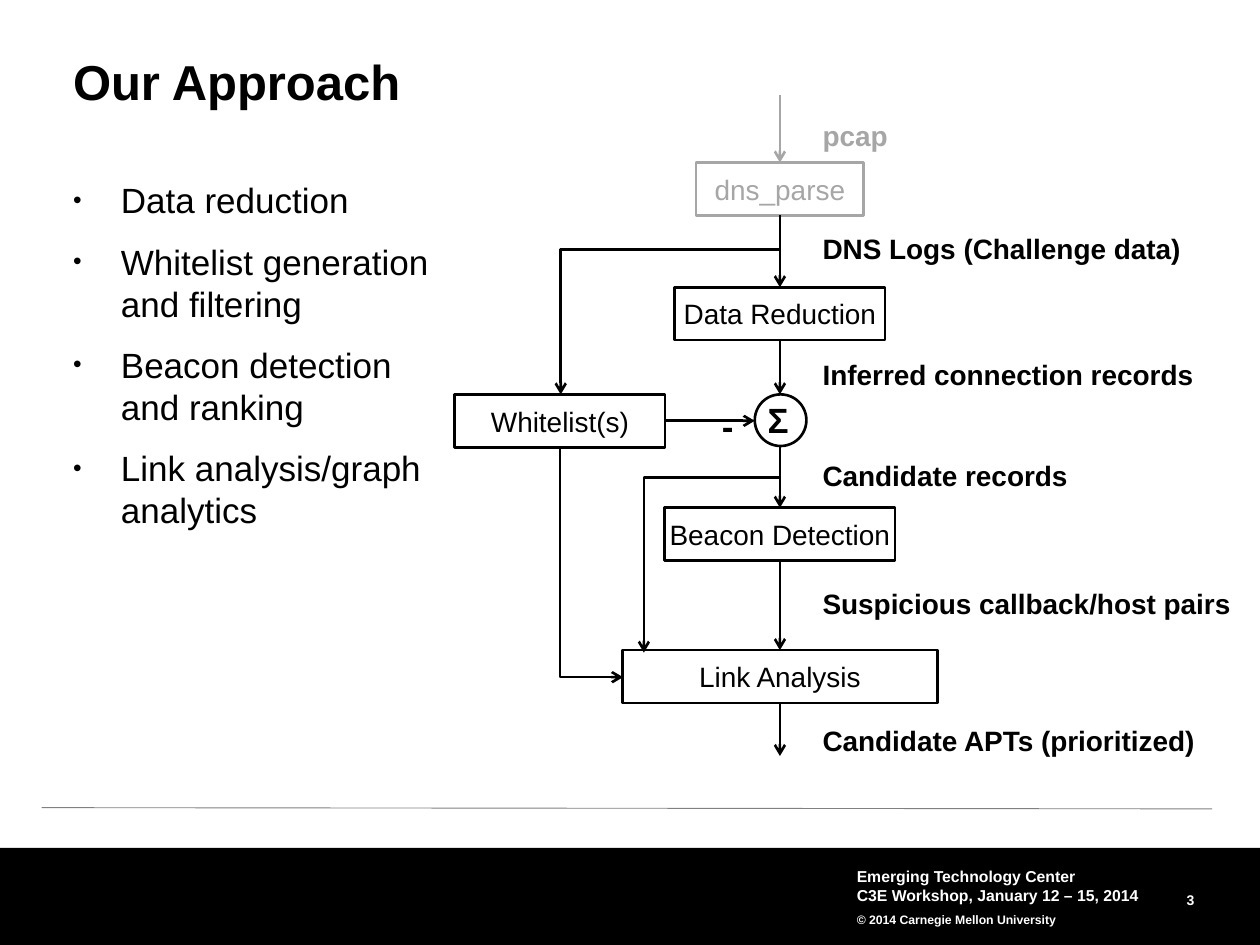
import pptx
import pptx.dml.color
import pptx.enum.shapes
import pptx.enum.text
import pptx.oxml.ns
import pptx.util
from lxml import etree

Inches, Pt = pptx.util.Inches, pptx.util.Pt
RGBColor = pptx.dml.color.RGBColor
Align, Anchor = pptx.enum.text.PP_ALIGN, pptx.enum.text.MSO_ANCHOR
Shape, Link = pptx.enum.shapes.MSO_SHAPE, pptx.enum.shapes.MSO_CONNECTOR
qn = pptx.oxml.ns.qn

BLACK = RGBColor(0x00, 0x00, 0x00)
WHITE = RGBColor(0xFF, 0xFF, 0xFF)
GRAY = RGBColor(0x80, 0x80, 0x80)
PALE = RGBColor(0xA6, 0xA6, 0xA6)
FLUSH = dict(margin_left=0, margin_right=0, margin_top=0, margin_bottom=0)


def put(item, values):
    """Set each named value on the item."""
    for name, value in values.items():
        setattr(item, name, value)


def write(para, words, size, color, bold=False, **form):
    """Fill a paragraph with one run in the given format."""
    put(para, form)
    run = para.add_run()
    run.text = words
    put(run.font, dict(name="Arial", size=Pt(size), bold=bold))
    run.font.color.rgb = color


def frame(slide, box, **form):
    """Add a text box and return its text frame."""
    area = slide.shapes.add_textbox(*map(Inches, box)).text_frame
    put(area, dict(word_wrap=True) | form)
    return area


def label(slide, box, words, size, color, align=Align.LEFT):
    """Add one bold line of text that does not wrap."""
    area = frame(slide, box, word_wrap=False)
    write(area.paragraphs[0], words, size, color, True, alignment=align)


def node(slide, kind, box, color):
    """Add an outlined shape without fill."""
    item = slide.shapes.add_shape(kind, *map(Inches, box))
    item.shadow.inherit = False
    item.fill.background()
    item.line.color.rgb = color
    item.line.width = Pt(1.5)
    return item


def stage(slide, box, words, color):
    """Add a process box with a centred name."""
    area = node(slide, Shape.RECTANGLE, box, color).text_frame
    put(area, FLUSH | dict(word_wrap=False, vertical_anchor=Anchor.MIDDLE))
    write(area.paragraphs[0], words, 16, color, alignment=Align.CENTER)


def line(slide, start, end, color=BLACK, width=1.5, kind=Link.STRAIGHT, arrow=True):
    """Add a connector, with an open arrowhead if asked."""
    item = slide.shapes.add_connector(kind, *map(Inches, start + end))
    item.line.color.rgb = color
    item.line.width = Pt(width)
    props = item._element.spPr
    if arrow:
        etree.SubElement(props.find(qn("a:ln")), qn("a:tailEnd"), type="arrow")
    etree.SubElement(props, qn("a:effectLst"))
    return item


def elbow(slide, box, preset, turn, flip=None, bend=None):
    """Add a bent arrow, turned and flipped inside its box."""
    x, y, w, h = box
    item = line(slide, (x, y), (x + w, y + h), kind=Link.ELBOW)
    props = item._element.spPr
    form = props.find(qn("a:xfrm"))
    form.set("rot", str(turn * 60000))
    if flip:
        form.set(flip, "1")
    shape = props.find(qn("a:prstGeom"))
    shape.set("prst", preset)
    if bend:
        guides = shape.find(qn("a:avLst"))
        etree.SubElement(guides, qn("a:gd"), name="adj1", fmla=f"val {bend}")


def footer(slide, box):
    """Draw the rule, the black band, its credits and page number."""
    x, y, w, h = box
    line(slide, (x + 0.33, y - 0.32), (x + 9.62, y - 0.31), GRAY, 0.5, arrow=False)
    band = slide.shapes.add_shape(Shape.RECTANGLE, *map(Inches, box))
    band.shadow.inherit = False
    band.fill.solid()
    band.fill.fore_color.rgb = BLACK
    band.line.fill.background()
    page = frame(slide, (x + 8.56, y + 0.3, 0.92, 0.18),
                 vertical_anchor=Anchor.MIDDLE, **FLUSH)
    write(page.paragraphs[0], "3", 8, WHITE, True,
          alignment=Align.RIGHT, line_spacing=Pt(13))
    inset = dict.fromkeys(FLUSH, Inches(0.05))
    area = frame(slide, (x + 6.75, y + 0.1, 2.5, 0.58),
                 vertical_anchor=Anchor.MIDDLE, **inset)
    rows = [("Emerging Technology Center", 9, 1.0),
            ("C3E Workshop, January 12 – 15, 2014", 9, 1.0),
            ("© 2014 Carnegie Mellon University", 7, 1.5)]
    for i, (words, size, gap) in enumerate(rows):
        para = area.add_paragraph() if i else area.paragraphs[0]
        write(para, words, size, WHITE, True, line_spacing=gap)


def title(slide, box):
    """Write the slide title."""
    area = frame(slide, box, **FLUSH)
    write(area.paragraphs[0], "Our Approach", 28, BLACK, True, line_spacing=0.9)


def points(slide, box):
    """Write the bulleted list of steps."""
    area = frame(slide, box, **FLUSH)
    rows = ["Data reduction", "Whitelist generation and filtering",
            "Beacon detection and ranking", "Link analysis/graph analytics"]
    for i, words in enumerate(rows):
        para = area.add_paragraph() if i else area.paragraphs[0]
        props = para._p.get_or_add_pPr()
        props.set("marL", str(Inches(0.38)))
        props.set("indent", str(-Inches(0.38)))
        etree.SubElement(props, qn("a:buSzPct"), val="70000")
        etree.SubElement(props, qn("a:buFont"), typeface="Arial")
        etree.SubElement(props, qn("a:buChar"), char="•")
        write(para, words, 20, BLACK,
              space_before=Pt(6 if i else 0), space_after=Pt(5))


def flow(slide, box):
    """Draw the processing chain around a vertical spine."""
    x, y, w, h = box
    mid, tall = x + 2.58, 0.42
    steps = [("dns_parse", 0.54, 1.33, PALE), ("Data Reduction", 1.53, 1.67, BLACK),
             ("Σ", 2.38, 0.41, BLACK), ("Beacon Detection", 3.28, 1.83, BLACK),
             ("Link Analysis", 4.41, 2.5, BLACK)]
    start = y
    for words, top, wide, color in steps:
        spot = (mid - wide / 2, y + top, wide, tall)
        if words == "Σ":
            node(slide, Shape.OVAL, (mid - 0.2, y + top, wide, wide), color)
            label(slide, (mid - 0.2, y + 2.36, 0.37, 0.44), words, 20, color,
                  Align.CENTER)
        else:
            stage(slide, spot, words, color)
        line(slide, (mid, start), (mid, y + top), color)
        start = y + top + tall
    line(slide, (mid, start), (mid, y + h))

    notes = [("pcap", 0.14, 0.72, PALE), ("DNS Logs (Challenge data)", 1.04, 3.16, BLACK),
             ("Inferred connection records", 2.04, 3.18, BLACK),
             ("Candidate records", 2.84, 2.17, BLACK),
             ("Suspicious callback/host pairs", 3.86, 3.48, BLACK),
             ("Candidate APTs (prioritized)", 4.94, 3.2, BLACK)]
    for words, top, wide, color in notes:
        label(slide, (mid + 0.24, y + top, wide, 0.37), words, 16, color)

    stage(slide, (x, y + 2.38, 1.67, tall), "Whitelist(s)", BLACK)
    line(slide, (x + 1.67, y + 2.59), (x + 2.38, y + 2.59))
    label(slide, (x + 2.02, y + 2.41, 0.29, 0.44), "-", 20, BLACK, Align.CENTER)
    elbow(slide, (x + 0.84, y + 1.23, 1.75, 1.15), "bentConnector2", 180, "flipV")
    elbow(slide, (x + 0.17, y + 3.46, 1.83, 0.5), "bentConnector2", 270, "flipH")
    elbow(slide, (x + 1.22, y + 3.07, 1.64, 1.08), "bentConnector3", 90, bend=15100)


def main():
    """Build the slide and save it."""
    deck = pptx.Presentation()
    put(deck, dict(slide_width=Inches(10), slide_height=Inches(7.5)))
    slide = deck.slides.add_slide(deck.slide_layouts[6])
    footer(slide, (0, 6.73, 10, 0.77))
    title(slide, (0.58, 0.46, 8.92, 0.42))
    points(slide, (0.58, 1.42, 2.86, 4.92))
    flow(slide, (3.61, 0.75, 6.3, 5.25))
    deck.save("out.pptx")


if __name__ == "__main__":
    main()
